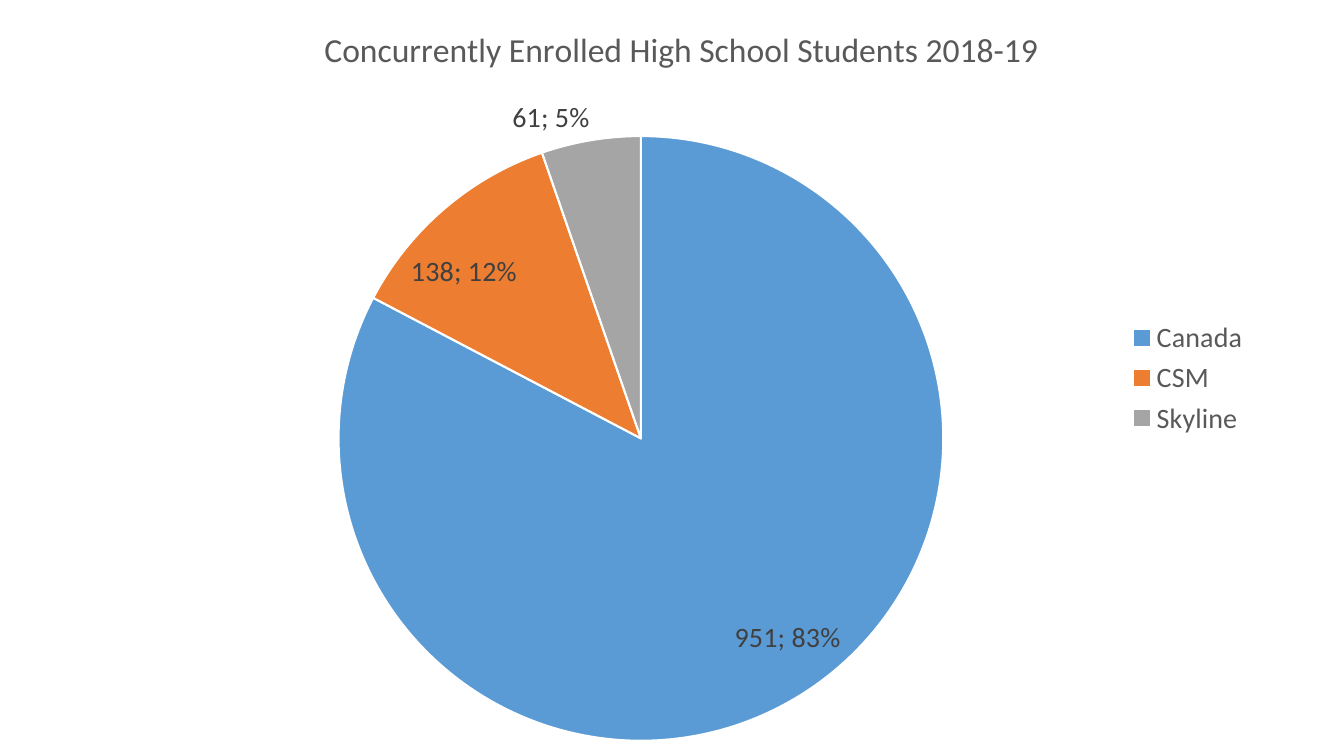
from lxml import etree
from pptx import Presentation
from pptx.chart.data import CategoryChartData
from pptx.dml.color import RGBColor
from pptx.enum.chart import XL_CHART_TYPE, XL_LABEL_POSITION, XL_LEGEND_POSITION
from pptx.oxml.ns import qn
from pptx.util import Pt

PIE = XL_CHART_TYPE.PIE
BEST_FIT = XL_LABEL_POSITION.BEST_FIT
RIGHT = XL_LEGEND_POSITION.RIGHT
BLANK_LAYOUT = 6
FONT = "Calibri"
TITLE = "Concurrently Enrolled High School Students 2018-19"
ENROLLMENT = {
    "Canada": (951, "5B9BD5"),
    "CSM": (138, "ED7D31"),
    "Skyline": (61, "A5A5A5"),
}
PIE_AREA = {"x": 0.2, "y": 0.18, "w": 0.53, "h": 0.8}


def color(value):
    return RGBColor.from_string(value)


def format_font(font, size=20, fill="595959", bold=False):
    font.name = FONT
    font.size = Pt(size)
    font.bold = bold
    font.color.rgb = color(fill)


def write_text(frame, text, **style):
    span = frame.paragraphs[0].add_run()
    span.text = text
    format_font(span.font, **style)


def place_plot(chart, area):
    plot_area = chart.plots[0]._element.getparent()
    for old_layout in plot_area.findall(qn("c:layout")):
        plot_area.remove(old_layout)
    layout = etree.Element(qn("c:layout"))
    manual = etree.SubElement(layout, qn("c:manualLayout"))
    settings = {"layoutTarget": "inner", "xMode": "edge", "yMode": "edge", **area}
    for name, value in settings.items():
        etree.SubElement(manual, qn(f"c:{name}")).set("val", str(value))
    plot_area.insert(0, layout)


def format_labels(plot):
    plot.has_data_labels = True
    labels = plot.data_labels
    labels.show_value = True
    labels.show_percentage = True
    labels.position = BEST_FIT
    format_font(labels.font, fill="404040")
    separator = etree.Element(qn("c:separator"))
    separator.text = "; "
    labels._element.find(qn("c:showBubbleSize")).addnext(separator)


def add_enrollment_pie(page, left, top, width, height):
    data = CategoryChartData()
    data.categories = list(ENROLLMENT)
    data.add_series("Series 1", [count for count, fill in ENROLLMENT.values()])
    box = page.shapes.add_chart(PIE, Pt(left), Pt(top), Pt(width), Pt(height), data)
    chart = box.chart
    format_font(chart.font, fill="000000")

    chart.has_title = True
    write_text(chart.chart_title.text_frame, TITLE, size=24)
    chart.chart_title.include_in_layout = False

    chart.has_legend = True
    chart.legend.position = RIGHT
    chart.legend.include_in_layout = False
    format_font(chart.legend.font)

    plot = chart.plots[0]
    plot.vary_by_categories = True
    for index, (count, fill) in enumerate(ENROLLMENT.values()):
        style = plot.series[0].points[index].format
        style.fill.solid()
        style.fill.fore_color.rgb = color(fill)
        style.line.color.rgb = color("FFFFFF")
        style.line.width = Pt(1.5)
    format_labels(plot)
    place_plot(chart, PIE_AREA)


def main():
    deck = Presentation()
    deck.slide_width = Pt(960)
    deck.slide_height = Pt(540)
    page = deck.slides.add_slide(deck.slide_layouts[BLANK_LAYOUT])
    add_enrollment_pie(page, 73.5, 0, 826.5, 540)
    deck.save("out.pptx")


if __name__ == "__main__":
    main()
